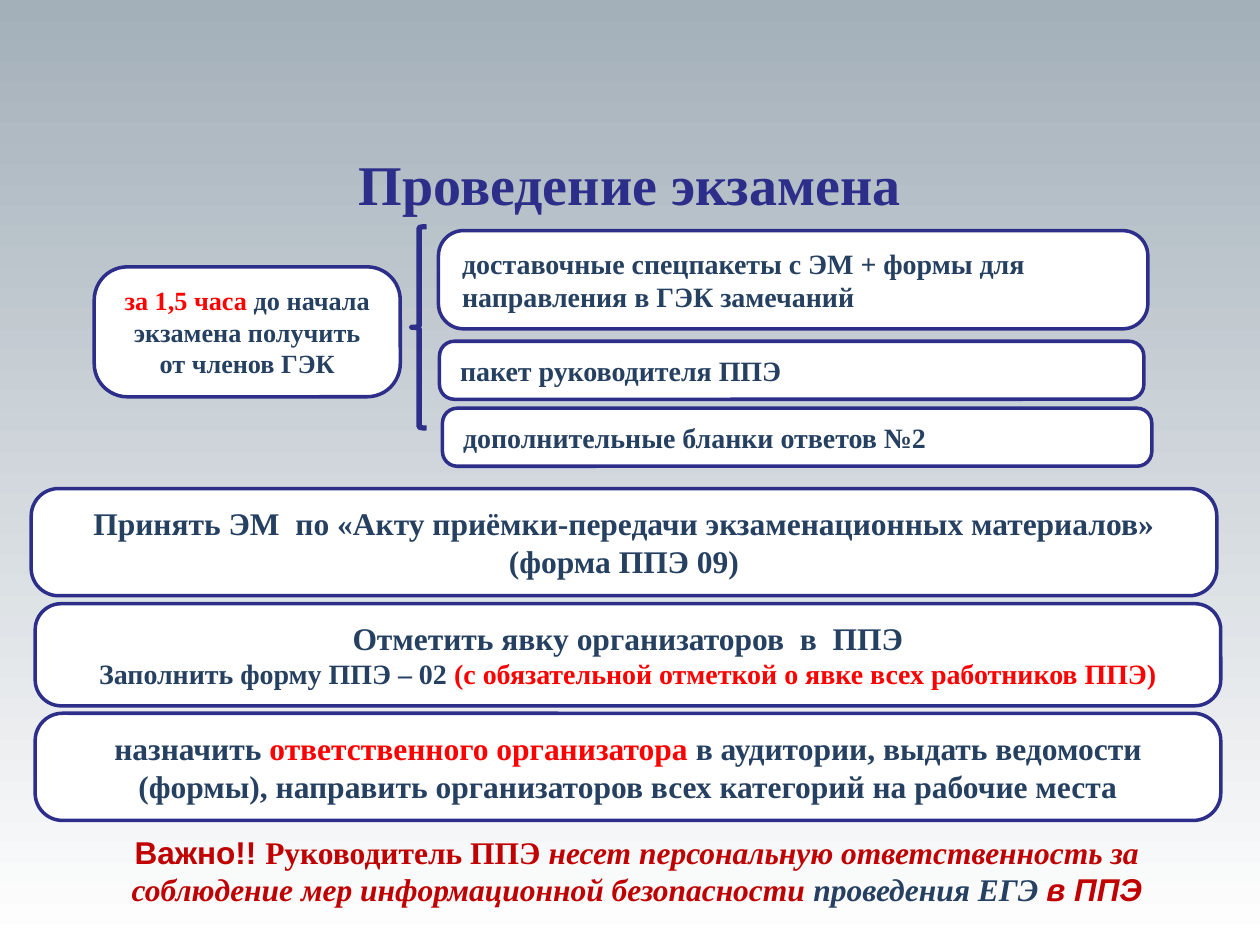
import pptx
import pptx.util
import pptx.dml.color
import pptx.enum.shapes
import pptx.enum.text
from pptx.util import Cm

SERIF = "Times New Roman"
INDIGO = "2D2D8A"
NAVY = "254061"
RED = "FF0000"
CRIMSON = "C00000"
WHITE = "FFFFFF"
LEFT = pptx.enum.text.PP_ALIGN.LEFT
CENTER = pptx.enum.text.PP_ALIGN.CENTER
SHAPES = pptx.enum.shapes.MSO_SHAPE


def color(value):
    return pptx.dml.color.RGBColor.from_string(value)


def place(shape, left, top, width, height):
    shape.left, shape.top = Cm(left), Cm(top)
    shape.width, shape.height = Cm(width), Cm(height)


def set_background(slide):
    fill = slide.background.fill
    fill.gradient()
    fill.gradient_angle = 90
    for stop, value in zip(fill.gradient_stops, (WHITE, "A3AFB9")):
        stop.color.rgb = color(value)


def write_paragraph(paragraph, runs, size, alignment=CENTER, name=SERIF):
    paragraph.alignment = alignment
    paragraph.font.size = pptx.util.Pt(size)
    paragraph.font.bold = True
    paragraph.font.name = name
    for text, value in runs:
        run = paragraph.add_run()
        run.text = text
        run.font.color.rgb = color(value)


def add_title(slide, text):
    title = slide.shapes.title
    place(title, 1.27, 2.72, 22.86, 3.18)
    frame = title.text_frame
    frame.vertical_anchor = pptx.enum.text.MSO_ANCHOR.TOP
    frame.margin_top = Cm(0.3)
    write_paragraph(frame.paragraphs[0], [(text, INDIGO)], 32)


def add_outlined(slide, kind, box, line_width):
    shape = slide.shapes.add_shape(kind, *map(Cm, box))
    shape.shadow.inherit = False
    shape.line.color.rgb = color(INDIGO)
    shape.line.width = pptx.util.Pt(line_width)
    return shape


def add_card(slide, box, paragraphs, alignment=CENTER):
    card = add_outlined(slide, SHAPES.ROUNDED_RECTANGLE, box, 2)
    card.adjustments[0] = 0.255
    card.fill.solid()
    card.fill.fore_color.rgb = color(WHITE)
    frame = card.text_frame
    frame.word_wrap = True
    frame.vertical_anchor = pptx.enum.text.MSO_ANCHOR.MIDDLE
    frame.margin_left = frame.margin_right = Cm(0.33)
    frame.margin_top = frame.margin_bottom = Cm(0.15)
    for index, (size, runs) in enumerate(paragraphs):
        paragraph = frame.add_paragraph() if index else frame.paragraphs[0]
        write_paragraph(paragraph, runs, size, alignment)


def add_brace(slide):
    brace = add_outlined(slide, SHAPES.LEFT_BRACE, (8.3, 4.57, 0.3, 4.06), 3)
    brace.fill.background()


def add_warning(slide):
    frame = slide.shapes.add_textbox(Cm(1.14), Cm(16.66), Cm(23.4), Cm(1.8)).text_frame
    frame.word_wrap = True
    paragraph = frame.paragraphs[0]
    write_paragraph(paragraph, [
        ("Важно!! ", CRIMSON),
        ("Руководитель ППЭ ", CRIMSON),
        ("несет персональную ответственность за соблюдение мер "
         "информационной безопасности ", CRIMSON),
        ("проведения ЕГЭ ", NAVY),
        ("в ППЭ", CRIMSON),
    ], 18)
    for run in paragraph.runs[2:]:
        run.font.italic = True
    for run in (paragraph.runs[0], paragraph.runs[-1]):
        run.font.name = "Arial"


def main():
    presentation = pptx.Presentation()
    presentation.slide_width, presentation.slide_height = Cm(25.4), Cm(19.05)
    slide = presentation.slides.add_slide(presentation.slide_layouts[5])
    set_background(slide)
    add_title(slide, "Проведение экзамена")

    add_card(slide, (1.9, 5.38, 6.17, 2.62), [(15, [
        ("за 1,5 часа ", RED),
        ("до начала экзамена получить от членов ГЭК", NAVY)])])
    add_brace(slide)
    received_items = [
        ((8.84, 4.65, 14.3, 1.98),
         "доставочные спецпакеты с ЭМ + формы для направления в ГЭК замечаний"),
        ((8.86, 6.88, 14.2, 1.17), "пакет руководителя ППЭ"),
        ((8.92, 8.23, 14.3, 1.17), "дополнительные бланки ответов №2"),
    ]
    for box, text in received_items:
        add_card(slide, box, [(16, [(text, NAVY)])], LEFT)

    steps = [
        ((0.63, 9.85, 23.9, 2.16), [(18, [
            ("Принять ЭМ  по «Акту приёмки-передачи экзаменационных "
             "материалов» (форма ППЭ 09)", NAVY)])]),
        ((0.71, 12.17, 23.9, 2.06), [
            (18, [("Отметить явку организаторов  в  ППЭ", NAVY)]),
            (16, [("Заполнить форму ППЭ – 02 ", NAVY),
                  ("(с обязательной отметкой о явке всех работников ППЭ)", RED)])]),
        ((0.71, 14.38, 23.9, 2.16), [(18, [
            ("назначить ", NAVY),
            ("ответственного организатора ", RED),
            ("в аудитории, выдать ведомости (формы), направить "
             "организаторов всех категорий на рабочие места", NAVY)])]),
    ]
    for box, paragraphs in steps:
        add_card(slide, box, paragraphs)
    add_warning(slide)
    presentation.save("out.pptx")


if __name__ == "__main__":
    main()
